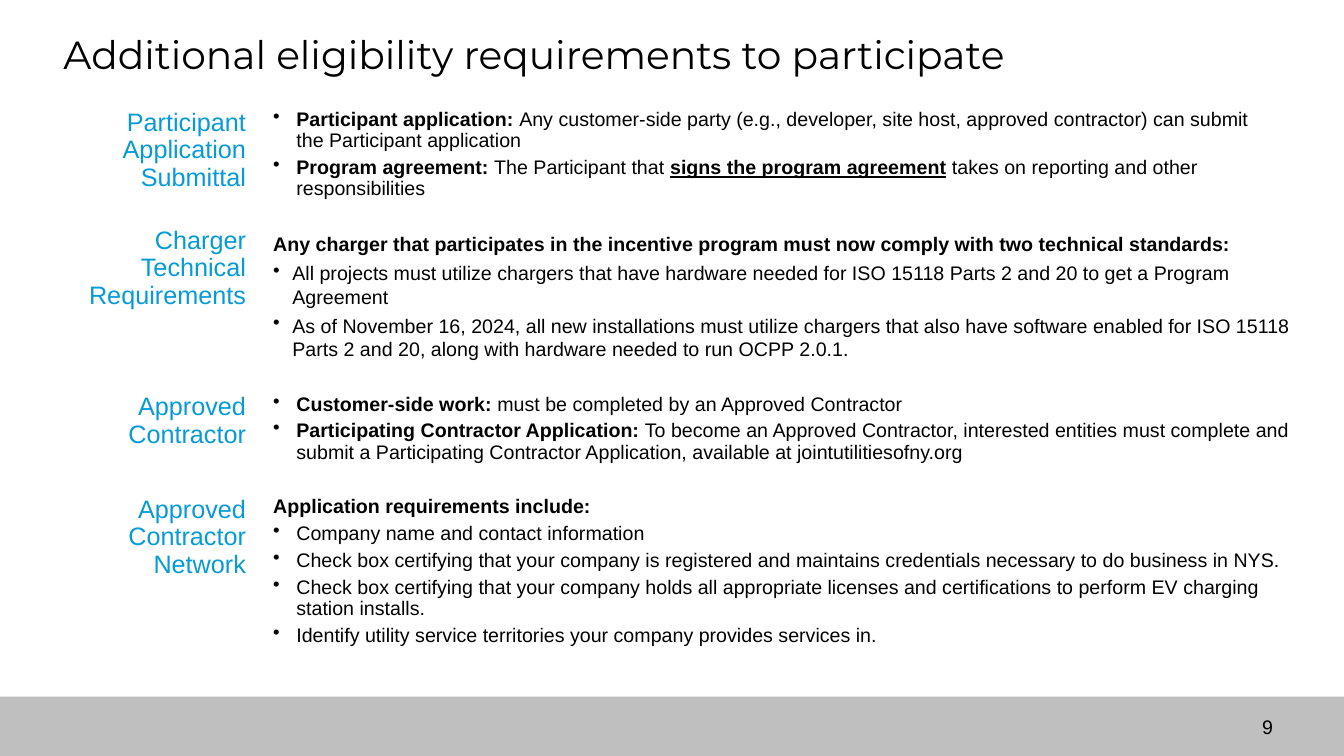
import pptx
import pptx.dml.color
import pptx.enum.shapes
import pptx.enum.text
import pptx.oxml.ns
import pptx.util
from lxml import etree

Inches = pptx.util.Inches
Pt = pptx.util.Pt
RGBColor = pptx.dml.color.RGBColor
ALIGN = pptx.enum.text.PP_ALIGN

BLACK = RGBColor(0x00, 0x00, 0x00)
WHITE = RGBColor(0xFF, 0xFF, 0xFF)
BLUE = RGBColor(0x06, 0x9B, 0xD7)
GREY = RGBColor(0xBF, 0xBF, 0xBF)

LABEL_LEFT, LABEL_WIDTH = 0.47, 1.97
BODY_LEFT = 2.71

SUBMITTAL = [
    [("Participant application: ", "b"),
     ("Any customer-side party (e.g., developer, site host, approved contractor) "
      "can submit the Participant application", "")],
    [("Program agreement: ", "b"), ("The Participant that ", ""),
     ("signs the program agreement", "bu"),
     (" takes on reporting and other responsibilities", "")],
]
CHARGERS = [
    [("All projects must utilize chargers that have hardware needed for ISO 15118 "
      "Parts 2 and 20 to get a Program Agreement", "")],
    [("As of November 16, 2024, all new installations must utilize chargers that also "
      "have software enabled for ISO 15118 Parts 2 and 20, along with hardware needed "
      "to run OCPP 2.0.1.", "")],
]
CONTRACTOR = [
    [("Customer-side work:", "b"), (" must be completed by an Approved Contractor", "")],
    [("Participating Contractor Application:", "b"),
     (" To become an Approved Contractor, interested entities must complete and submit a "
      "Participating Contractor Application, available at jointutilitiesofny.org", "")],
]
NETWORK = [
    [("Company name and contact information", "")],
    [("Check box certifying that your company is registered and maintains credentials "
      "necessary to do business in NYS.", "")],
    [("Check box certifying that your company holds all appropriate licenses and "
      "certifications to perform EV charging station installs.", "")],
    [("Identify utility service territories your company provides services in.", "")],
]


def add_bullet(paragraph, indent):
    properties = paragraph._p.get_or_add_pPr()
    properties.set("marL", str(Inches(indent)))
    properties.set("indent", str(-Inches(indent)))
    bullet = etree.SubElement(properties, pptx.oxml.ns.qn("a:buChar"))
    bullet.set("char", "•")


def add_text(paragraph, text, size=14, font="Arial", color=BLACK, bold=False, underline=False):
    run = paragraph.add_run()
    run.text = text
    run.font.size = Pt(size)
    run.font.name = font
    run.font.color.rgb = color
    run.font.bold = bold
    run.font.underline = underline


def set_frame(shape, margins=(0, 0, 0, 0), wrap=True):
    frame = shape.text_frame
    frame.word_wrap = wrap
    frame.vertical_anchor = pptx.enum.text.MSO_ANCHOR.TOP
    frame.margin_left, frame.margin_top, frame.margin_right, frame.margin_bottom = map(
        Inches, margins)
    return frame


def add_box(slide, left, top, width, height, **frame_format):
    shape = slide.shapes.add_textbox(*map(Inches, (left, top, width, height)))
    return set_frame(shape, **frame_format)


def add_rectangle(slide, left, top, width, height, color):
    shape = slide.shapes.add_shape(
        pptx.enum.shapes.MSO_SHAPE.RECTANGLE, *map(Inches, (left, top, width, height)))
    shape.shadow.inherit = False
    shape.fill.solid()
    shape.fill.fore_color.rgb = color
    shape.line.fill.background()
    return shape


def add_label(slide, top, height, text):
    shape = add_rectangle(slide, LABEL_LEFT, top, LABEL_WIDTH, height, WHITE)
    paragraph = set_frame(shape).paragraphs[0]
    paragraph.alignment = ALIGN.RIGHT
    paragraph.line_spacing = 0.9
    add_text(paragraph, text, size=18, color=BLUE)


def add_body(slide, top, height, bullets, heading=None, width=10.24, indent=0.23,
             line_spacing=0.9, margins=(0, 0, 0, 0)):
    frame = add_box(slide, BODY_LEFT, top, width, height, margins=margins)
    items = ([[(heading, "b")]] if heading else []) + bullets
    for index, segments in enumerate(items):
        paragraph = frame.add_paragraph() if index else frame.paragraphs[0]
        if index or not heading:
            add_bullet(paragraph, indent)
        paragraph.line_spacing = line_spacing
        paragraph.space_before = Pt(4 if index else 0)
        for text, style in segments:
            add_text(paragraph, text, bold="b" in style, underline="u" in style)


def add_title(slide, text):
    frame = add_box(slide, 0.5, 0.28, 12.33, 1, margins=(0.13, 0.07, 0.13, 0.07))
    frame.paragraphs[0].line_spacing = 0.9
    add_text(frame.paragraphs[0], text, size=28, font="Montserrat")


def add_footer(slide, number):
    add_rectangle(slide, 0, 6.91, 13.33, 0.59, GREY)
    frame = add_box(slide, 12.42, 7.04, 0.44, 0.34, margins=(0.1, 0.05, 0.1, 0.05), wrap=False)
    add_text(frame.paragraphs[0], number)


def main():
    presentation = pptx.Presentation()
    presentation.slide_width = Inches(13.33)
    presentation.slide_height = Inches(7.5)
    slide = presentation.slides.add_slide(presentation.slide_layouts[6])

    add_footer(slide, "9")
    add_title(slide, "Additional eligibility requirements to participate")

    add_label(slide, 1.09, 0.82, "Participant Application Submittal")
    add_body(slide, 1.09, 0.9, SUBMITTAL, width=9.91)

    add_label(slide, 2.26, 0.82, "Charger Technical Requirements")
    add_body(slide, 2.25, 1.39, CHARGERS, indent=0.19, line_spacing=1.0,
             margins=(0, 0.05, 0.1, 0.05),
             heading="Any charger that participates in the incentive program must now "
                     "comply with two technical standards:")

    add_label(slide, 3.91, 0.55, "Approved Contractor")
    add_body(slide, 3.91, 0.79, CONTRACTOR)

    add_label(slide, 4.93, 0.82, "Approved Contractor Network")
    add_body(slide, 4.93, 1.5, NETWORK, heading="Application requirements include:")

    presentation.save("out.pptx")


if __name__ == "__main__":
    main()
